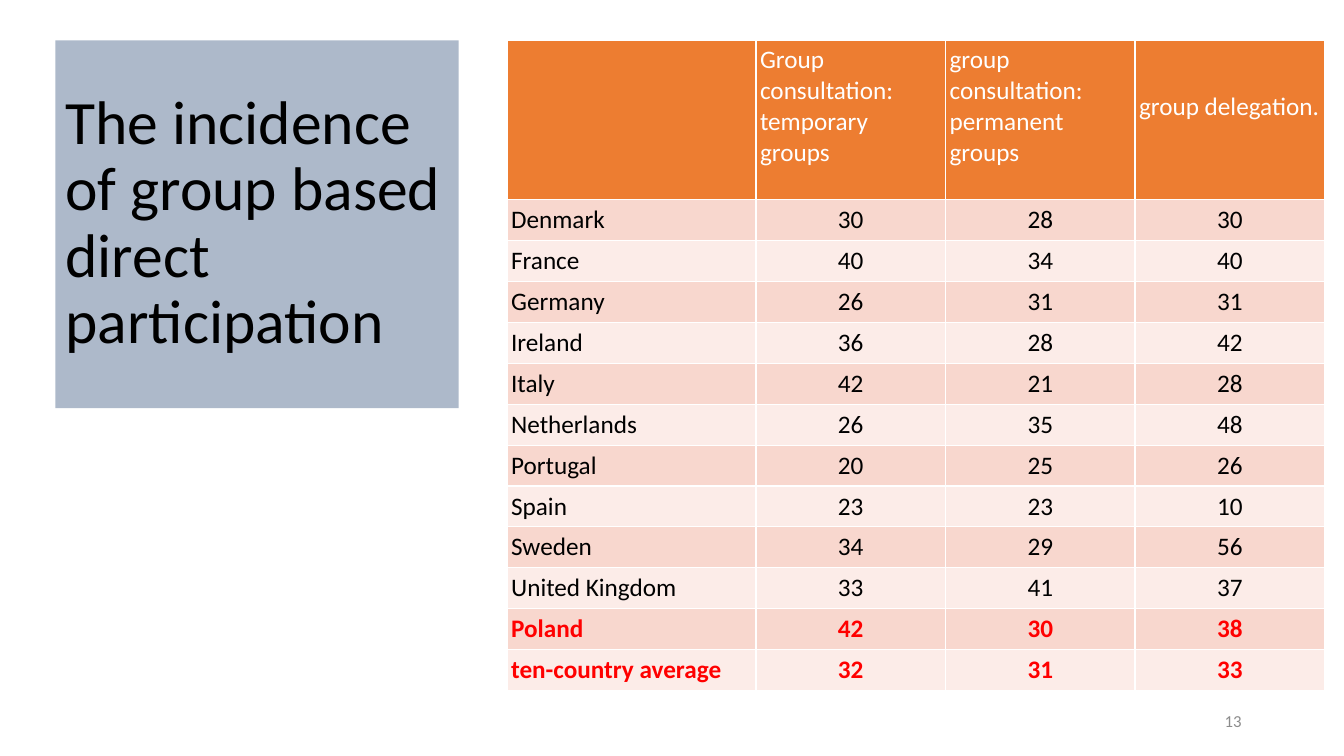
from pptx import Presentation
from pptx import util as u
from pptx.dml.color import RGBColor
from pptx.enum import text as t

# Content
TITLE = "The incidence of group based direct participation"
PAGE_NUMBER = "13"
HEADINGS = [
    "",
    "Group consultation:\ntemporary\ngroups",
    "group consultation:\npermanent groups",
    "group delegation.",
]
COUNTRIES = [
    ("Denmark", 30, 28, 30),
    ("France", 40, 34, 40),
    ("Germany", 26, 31, 31),
    ("Ireland", 36, 28, 42),
    ("Italy", 42, 21, 28),
    ("Netherlands", 26, 35, 48),
    ("Portugal", 20, 25, 26),
    ("Spain", 23, 23, 10),
    ("Sweden", 34, 29, 56),
    ("United Kingdom", 33, 41, 37),
]
HIGHLIGHTS = [
    ("Poland", 42, 30, 38),
    ("ten-country average", 32, 31, 33),
]

# Style, lengths in points
FONT = "Calibri"
BLACK = RGBColor(0x00, 0x00, 0x00)
WHITE = RGBColor(0xFF, 0xFF, 0xFF)
RED = RGBColor(0xFF, 0x00, 0x00)
GREY = RGBColor(0x8C, 0x8C, 0x8C)
BLUE_GREY = RGBColor(0xAD, 0xB9, 0xCA)
ORANGE = RGBColor(0xED, 0x7D, 0x31)
BANDS = [RGBColor(0xF8, 0xD7, 0xCE), RGBColor(0xFC, 0xEC, 0xE8)]

COLUMN_WIDTHS = [177.8, 135.4, 135.4, 135.4]
HEADING_HEIGHT, ROW_HEIGHT = 114, 29.2
CELL_MARGIN, HEADING_BOTTOM = 2.9, 22.5


def write(frame, words, size=18, color=BLACK, bold=False,
          align=t.PP_ALIGN.LEFT, spacing=1.0):
    """Fill a text frame, one paragraph per line."""
    frame.word_wrap = True
    frame.text = words
    for para in frame.paragraphs:
        para.alignment = align
        para.line_spacing = spacing
        para.font.size = u.Pt(size)
        for span in para.runs:
            span.font.name = FONT
            span.font.size = u.Pt(size)
            span.font.bold = bold
            span.font.color.rgb = color


deck = Presentation()
deck.slide_width, deck.slide_height = u.Pt(960), u.Pt(540)
page = deck.slides.add_slide(deck.slide_layouts[5])

# Title panel
title = page.shapes.title
title.left, title.top = u.Pt(39.6), u.Pt(28.8)
title.width, title.height = u.Pt(288), u.Pt(262.8)
title.fill.solid()
title.fill.fore_color.rgb = BLUE_GREY
write(title.text_frame, TITLE, size=44, spacing=0.9)
title.text_frame.auto_size = t.MSO_AUTO_SIZE.NONE
title.text_frame.vertical_anchor = t.MSO_ANCHOR.MIDDLE

# Table
rows = [HEADINGS] + COUNTRIES + HIGHLIGHTS
heights = [HEADING_HEIGHT] + [ROW_HEIGHT] * (len(rows) - 1)
table = page.shapes.add_table(
    len(rows), len(HEADINGS), u.Pt(362.2), u.Pt(28.8),
    u.Pt(sum(COLUMN_WIDTHS)), u.Pt(sum(heights))).table
for column, width in zip(table.columns, COLUMN_WIDTHS):
    column.width = u.Pt(width)

for r, (values, height) in enumerate(zip(rows, heights)):
    table.rows[r].height = u.Pt(height)
    is_heading = r == 0
    is_highlight = values in HIGHLIGHTS
    color = WHITE if is_heading else RED if is_highlight else BLACK
    for c, value in enumerate(values):
        cell = table.cell(r, c)
        cell.fill.solid()
        cell.fill.fore_color.rgb = ORANGE if is_heading else BANDS[(r - 1) % 2]
        cell.vertical_anchor = t.MSO_ANCHOR.MIDDLE
        cell.margin_left = cell.margin_right = u.Pt(CELL_MARGIN)
        cell.margin_top = u.Pt(CELL_MARGIN)
        cell.margin_bottom = u.Pt(HEADING_BOTTOM if is_heading else CELL_MARGIN)
        centred = c > 0 and not is_heading
        write(cell.text_frame, str(value), color=color, bold=is_highlight,
              align=t.PP_ALIGN.CENTER if centred else t.PP_ALIGN.LEFT)

# Page number
box = page.shapes.add_textbox(u.Pt(678), u.Pt(500.5), u.Pt(216), u.Pt(28.8))
box.text_frame.vertical_anchor = t.MSO_ANCHOR.MIDDLE
write(box.text_frame, PAGE_NUMBER, size=12, color=GREY, align=t.PP_ALIGN.RIGHT)

deck.save("out.pptx")
